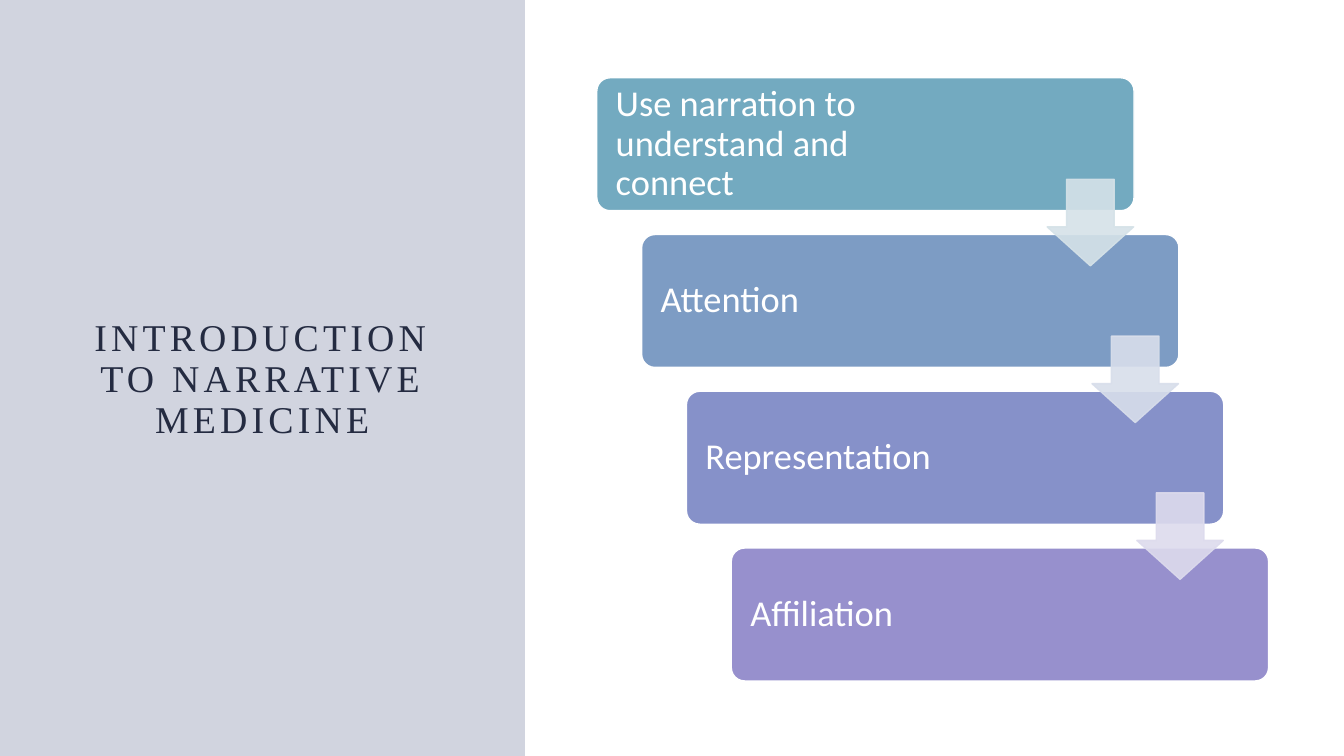
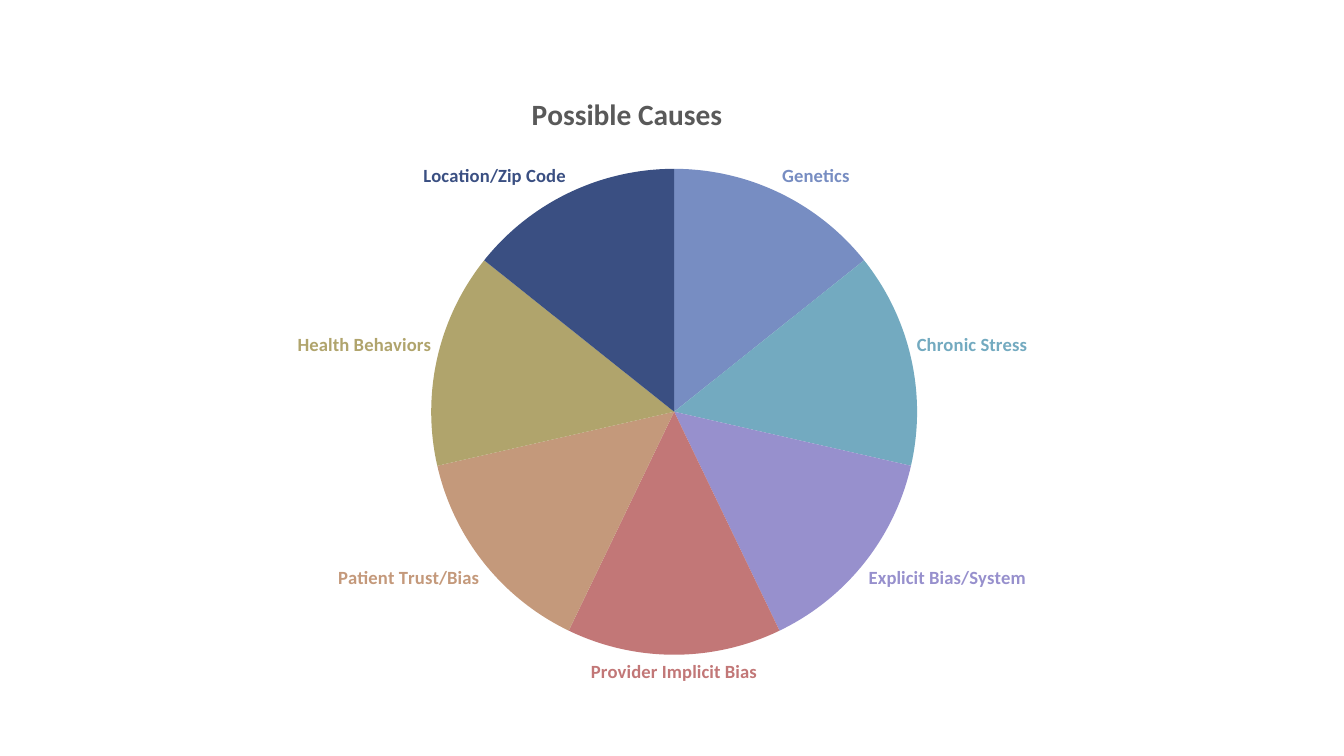
from lxml.etree import SubElement
from pptx import Presentation
from pptx.chart.data import CategoryChartData
from pptx.dml.color import RGBColor
from pptx.enum.chart import XL_CHART_TYPE, XL_LABEL_POSITION
from pptx.enum.shapes import MSO_SHAPE
from pptx.enum.text import MSO_ANCHOR, PP_ALIGN
from pptx.oxml.ns import qn
from pptx.util import Cm, Pt

COLORS = {
    "white": "FFFFFF", "panel": "485783", "title": "242B41", "chart title": "595959",
    "teal": "73AAC0", "steel": "7D9CC4", "periwinkle": "8691C9", "violet": "9790CD",
    "pale teal": "D5E2E8", "pale steel": "D8DEEB", "pale violet": "DDDBED",
    "blue": "778DC2", "rose": "C27777", "tan": "C4997B", "olive": "B0A46C", "navy": "3A4F82",
}
BODY_FONT = "Calibri"
TITLE_FONT = "Times New Roman"


def add_filled_shape(page, kind, place, color, opacity=100, line_width=0):
    """Add a shape whose fill and optional line share one opacity in percent."""
    shape = page.shapes.add_shape(kind, *[Cm(length) for length in place])
    shape.shadow.inherit = False
    shape.fill.solid()
    shape.fill.fore_color.rgb = RGBColor.from_string(COLORS[color])
    if line_width:
        shape.line.width = Pt(line_width)
        shape.line.color.rgb = RGBColor.from_string(COLORS[color])
    else:
        shape.line.fill.background()
    if opacity < 100:
        for tint in shape.element.spPr.iter(qn("a:srgbClr")):
            SubElement(tint, qn("a:alpha")).set("val", str(opacity * 1000))
    return shape


def set_layout(parent, index, **settings):
    """Give a chart part a manual layout, in fractions of the chart."""
    for old_layout in parent.findall(qn("c:layout")):
        parent.remove(old_layout)
    layout = SubElement(parent, qn("c:layout"))
    manual = SubElement(layout, qn("c:manualLayout"))
    for name, value in settings.items():
        SubElement(manual, qn("c:" + name)).set("val", str(value))
    parent.insert(index, layout)


deck = Presentation()
deck.slide_width, deck.slide_height = Cm(33.87), Cm(19.05)
blank = deck.slide_layouts[6]

# Slide 1: side panel and staircase of steps
page = deck.slides.add_slide(blank)
add_filled_shape(page, MSO_SHAPE.RECTANGLE, (0, 0, 13.23, 19.05), "panel", opacity=25)

box = page.shapes.add_textbox(Cm(1.9), Cm(1.96), Cm(9.42), Cm(15.24))
box.text_frame.word_wrap = True
box.text_frame.vertical_anchor = MSO_ANCHOR.MIDDLE
para = box.text_frame.paragraphs[0]
para.alignment = PP_ALIGN.CENTER
para.line_spacing = 0.9
span = para.add_run()
span.text = "INTRODUCTION TO NARRATIVE MEDICINE"
span.font.name = TITLE_FONT
span.font.size = Pt(27)
span.font.color.rgb = RGBColor.from_string(COLORS["title"])
span.font._element.set("spc", "300")

STEPS = [
    ("Use narration to understand and connect", "teal"),
    ("Attention", "steel"),
    ("Representation", "periwinkle"),
    ("Affiliation", "violet"),
]
STEP_RIGHT, STEP_DOWN = 1.13, 3.95

for number, (label, color) in enumerate(STEPS):
    place = (15.04 + number * STEP_RIGHT, 1.96 + number * STEP_DOWN, 13.54, 3.35)
    card = add_filled_shape(page, MSO_SHAPE.ROUNDED_RECTANGLE, place, color)
    card.adjustments[0] = 0.1
    card.line.width = Pt(1)
    card.line.color.rgb = RGBColor.from_string(COLORS["white"])
    frame = card.text_frame
    frame.word_wrap = True
    frame.vertical_anchor = MSO_ANCHOR.MIDDLE
    frame.margin_left, frame.margin_right = Cm(0.38), Cm(4)
    para = frame.paragraphs[0]
    para.alignment = PP_ALIGN.LEFT
    para.line_spacing = 0.9
    span = para.add_run()
    span.text = label
    span.font.name = BODY_FONT
    span.font.size = Pt(26)
    span.font.color.rgb = RGBColor.from_string(COLORS["white"])

for number, color in enumerate(["pale teal", "pale steel", "pale violet"]):
    place = (26.39 + number * STEP_RIGHT, 4.52 + number * STEP_DOWN, 2.18, 2.18)
    arrow = add_filled_shape(page, MSO_SHAPE.DOWN_ARROW, place, color, opacity=90, line_width=1)
    arrow.adjustments[0] = 0.55
    arrow.adjustments[1] = 0.45

# Slide 2: pie of possible causes
CAUSES = {
    "Genetics": "blue",
    "Chronic Stress": "teal",
    "Explicit Bias/System": "violet",
    "Provider Implicit Bias": "rose",
    "Patient Trust/Bias": "tan",
    "Health Behaviors": "olive",
    "Location/Zip Code": "navy",
}

page = deck.slides.add_slide(blank)
data = CategoryChartData()
data.categories = list(CAUSES)
data.add_series("Series 1", [14] * len(CAUSES))
chart = page.shapes.add_chart(
    XL_CHART_TYPE.PIE, Cm(1.47), Cm(1.9), Cm(31.04), Cm(15.7), data
).chart
chart.has_legend = False
chart.font.name = BODY_FONT
chart.font.size = Pt(10)

chart.has_title = True
span = chart.chart_title.text_frame.paragraphs[0].add_run()
span.text = "Possible Causes"
span.font.name = BODY_FONT
span.font.size = Pt(21)
span.font.bold = True
span.font.color.rgb = RGBColor.from_string(COLORS["chart title"])

plot = chart.plots[0]
plot.vary_by_categories = True
for number, color in enumerate(CAUSES.values()):
    point = plot.series[0].points[number]
    point.format.fill.solid()
    point.format.fill.fore_color.rgb = RGBColor.from_string(COLORS[color])
    point.format.line.fill.background()
    label = point.data_label
    label.position = XL_LABEL_POSITION.OUTSIDE_END
    label.font.name = BODY_FONT
    label.font.size = Pt(13.3)
    label.font.bold = True
    label.font.color.rgb = RGBColor.from_string(COLORS[color])

for label in chart.element.iter(qn("c:dLbl")):
    label.find(qn("c:showVal")).set("val", "0")
    label.find(qn("c:showCatName")).set("val", "1")

set_layout(chart.chart_title.element, 1, xMode="edge", yMode="edge", x=0.38, y=0.02)
set_layout(chart.element.chart.plotArea, 0, layoutTarget="inner", xMode="edge", yMode="edge",
           x=0.3, y=0.15, w=0.4, h=0.78)

deck.save("out.pptx")
